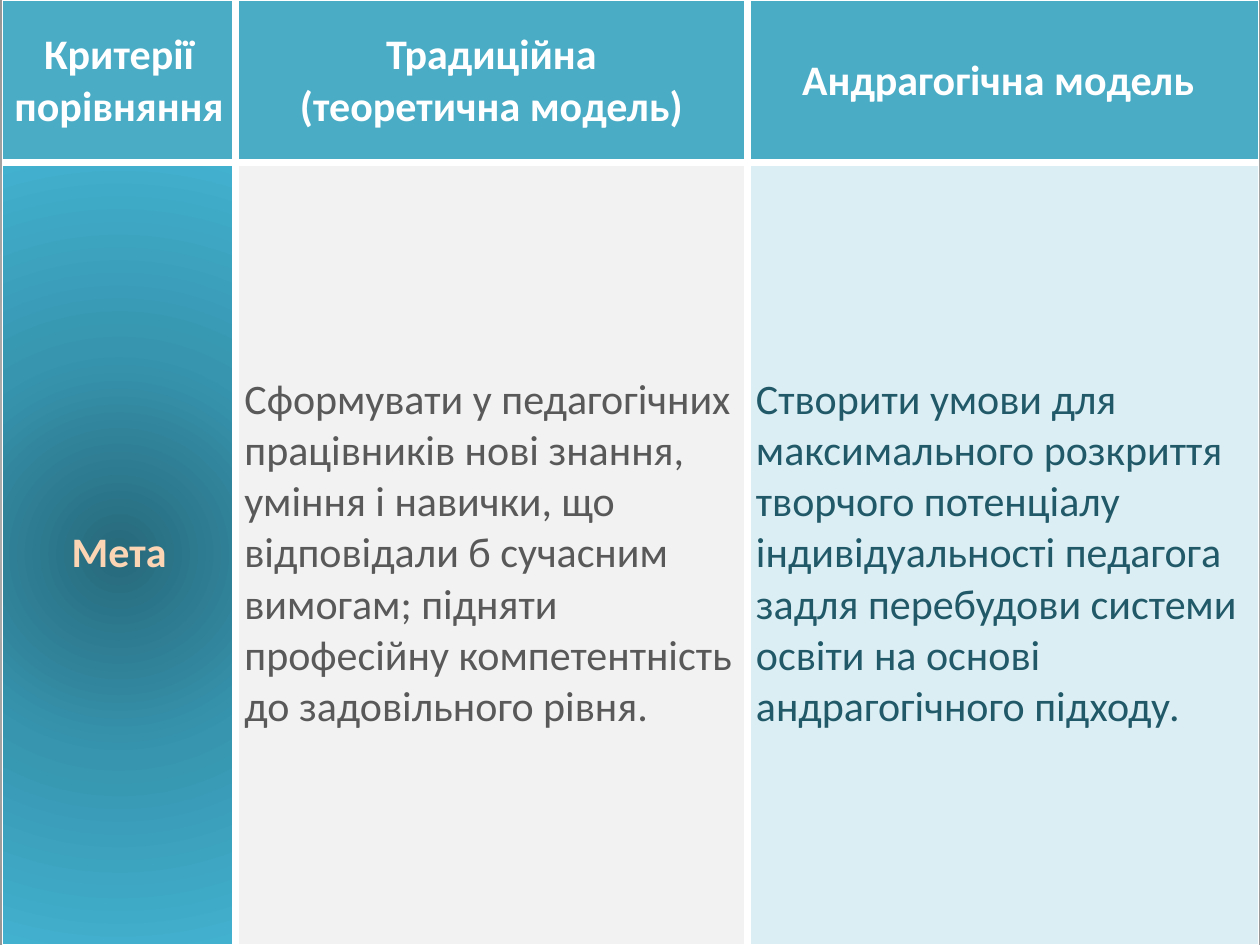
from pptx import Presentation
from pptx import util as u
from pptx.dml.color import RGBColor
from pptx.enum import text
from pptx.oxml import parse_xml
from pptx.oxml.ns import nsdecls, qn

WHITE = RGBColor(0xFF, 0xFF, 0xFF)
GRAY = RGBColor(0x97, 0x97, 0x97)
TEAL = RGBColor(0x4B, 0xAC, 0xC6)
DEEP = RGBColor(0x27, 0x69, 0x7B)
MID = RGBColor(0x37, 0x95, 0xAF)
SKY = RGBColor(0x42, 0xB1, 0xCF)
PEACH = RGBColor(0xFC, 0xD5, 0xB5)
PALE = RGBColor(0xF2, 0xF2, 0xF2)
ICE = RGBColor(0xDB, 0xEE, 0xF4)
INK = RGBColor(0x59, 0x59, 0x59)
NAVY = RGBColor(0x21, 0x59, 0x68)

LEFT = text.PP_ALIGN.LEFT
MIDDLE = text.PP_ALIGN.CENTER
COLS = [1.85, 4.06, 4.06]
ROWS = [1.29, 6.21]


def radial(fill, root, hues):
    """Give a fill an even gradient that runs out from its centre."""
    fill.gradient()
    grad = root.find(".//" + qn("a:gradFill"))
    grad.clear()
    step = 100000 // (len(hues) - 1)
    stops = "".join(
        f'<a:gs pos="{i * step}"><a:srgbClr val="{hue}"/></a:gs>'
        for i, hue in enumerate(hues))
    grad.append(parse_xml(f'<a:gsLst {nsdecls("a")}>{stops}</a:gsLst>'))
    grad.append(parse_xml(
        f'<a:path {nsdecls("a")} path="circle">'
        '<a:fillToRect l="50000" t="50000" r="50000" b="50000"/></a:path>'))


def edge(side, width):
    return parse_xml(
        f'<a:ln{side} {nsdecls("a")} w="{u.Pt(width)}">'
        f'<a:solidFill><a:srgbClr val="{WHITE}"/></a:solidFill></a:ln{side}>')


# Slide and background
deck = Presentation()
deck.slide_width, deck.slide_height = u.Inches(10), u.Inches(7.5)
slide = deck.slides.add_slide(deck.slide_layouts[6])
radial(slide.background.fill, slide.element, [WHITE, GRAY])

# Table grid
frame = slide.shapes.add_table(
    len(ROWS), len(COLS), u.Inches(0.02), 0,
    u.Inches(sum(COLS)), u.Inches(sum(ROWS)))
table = frame.table
table.horz_banding = False
for col, width in zip(table.columns, COLS):
    col.width = u.Inches(width)
for row, height in zip(table.rows, ROWS):
    row.height = u.Inches(height)

# Cell wording, fill, text colour, alignment; the first row is bold
cells = [
    ("Критерії порівняння", TEAL, WHITE, MIDDLE, True),
    ("Традиційна\n(теоретична модель)", TEAL, WHITE, MIDDLE, True),
    ("Андрагогічна модель ", TEAL, WHITE, MIDDLE, True),
    ("Мета", None, PEACH, MIDDLE, True),
    ("Сформувати у педагогічних працівників нові знання, уміння і навички, "
     "що відповідали б сучасним вимогам; підняти професійну компетентність "
     "до задовільного рівня.", PALE, INK, LEFT, False),
    ("Створити умови для максимального розкриття творчого потенціалу "
     "індивідуальності педагога задля перебудови системи освіти на основі "
     "андрагогічного підходу.", ICE, NAVY, LEFT, False),
]
inset = {"margin_left": u.Inches(0.07), "margin_right": u.Inches(0.07),
         "margin_top": 0, "margin_bottom": 0,
         "vertical_anchor": text.MSO_ANCHOR.MIDDLE}
for cell, (words, hue, ink, align, bold) in zip(table.iter_cells(), cells):
    cell.text = words
    for key, val in inset.items():
        setattr(cell, key, val)
    if hue is None:
        radial(cell.fill, frame.element, [DEEP, MID, SKY])
    else:
        cell.fill.solid()
        cell.fill.fore_color.rgb = hue
    face = {"name": "Calibri", "size": u.Pt(24), "bold": bold}
    for para in cell.text_frame.paragraphs:
        para.alignment = align
        for run in para.runs:
            for key, val in face.items():
                setattr(run.font, key, val)
            run.font.color.rgb = ink

# Borders: thick between cells, thin around the table
for r, line in enumerate(frame.element.iter(qn("a:tr"))):
    for c, box in enumerate(line.iter(qn("a:tc"))):
        outer = {"L": c == 0, "R": c == len(COLS) - 1,
                 "T": r == 0, "B": r == len(ROWS) - 1}
        props = box.find(qn("a:tcPr"))
        for i, (side, thin) in enumerate(outer.items()):
            props.insert(i, edge(side, 1 if thin else 4.5))

deck.save("out.pptx")
